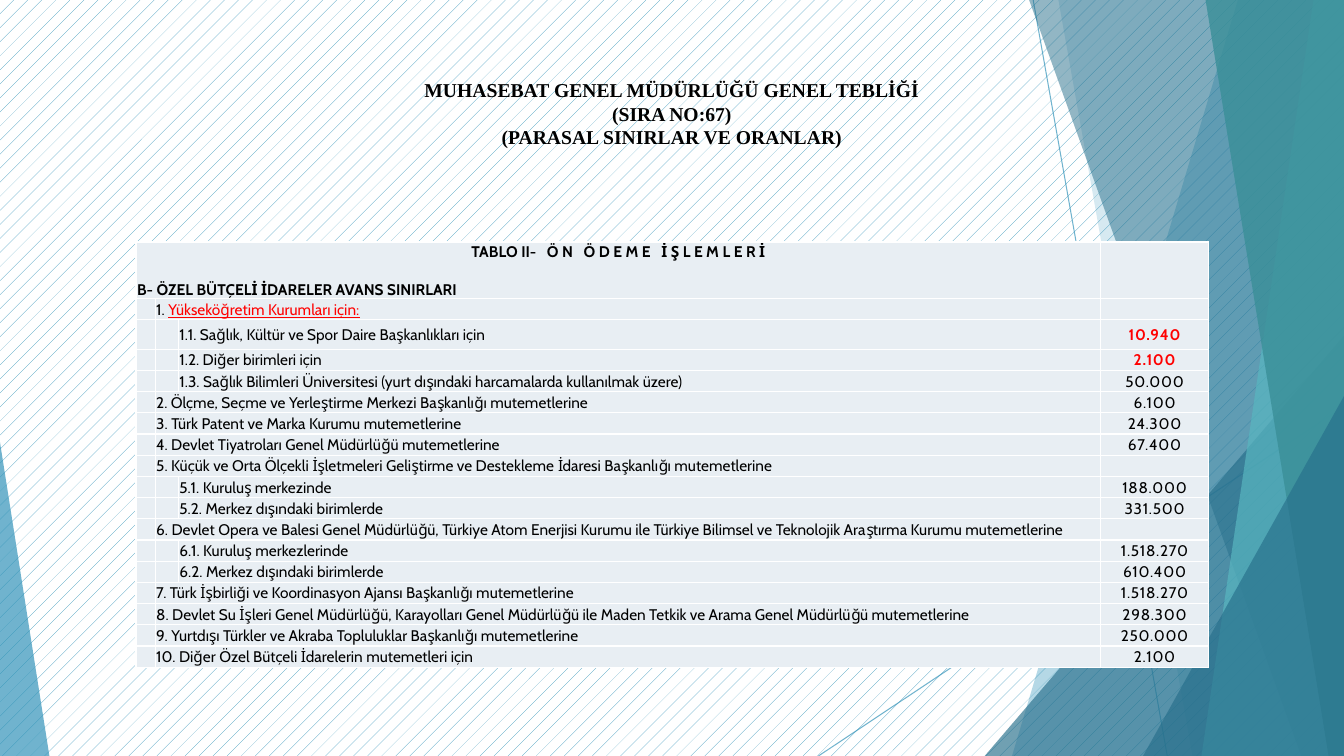
from lxml.etree import SubElement
from pptx import Presentation
from pptx.dml.color import RGBColor
from pptx.enum.dml import MSO_PATTERN
from pptx.enum.shapes import MSO_CONNECTOR, MSO_SHAPE
from pptx.enum.text import MSO_ANCHOR, MSO_AUTO_SIZE, PP_ALIGN
from pptx.oxml.ns import qn
from pptx.util import Pt

BLUE = RGBColor(0x34, 0x94, 0xBA)
DEEP = RGBColor(0x27, 0x6F, 0x8B)
AQUA = RGBColor(0x58, 0xB6, 0xC0)
TEAL = RGBColor(0x3A, 0x8F, 0x98)
PALE = RGBColor(0xE8, 0xEE, 0xF3)
WHITE = RGBColor(0xFF, 0xFF, 0xFF)
BLACK = RGBColor(0, 0, 0)
RED = RGBColor(0xFF, 0, 0)


def fade(shape, alpha):
    """Give the shape's first colour an opacity in percent."""
    color = shape._element.spPr.find(".//" + qn("a:srgbClr"))
    SubElement(color, qn("a:alpha")).set("val", str(alpha * 1000))


def write(para, text, gap=0, **look):
    """Add a run; gap is extra letter spacing in points."""
    run = para.add_run()
    run.text = text
    font = run.font
    form = {"name": "Cabin", "size": Pt(11), "bold": False} | look
    font.color.rgb = form.pop("color", BLACK)
    for name, value in form.items():
        setattr(font, name, value)
    if gap:
        run._r.get_or_add_rPr().set("spc", str(int(gap * 100)))


deck = Presentation()
deck.slide_width, deck.slide_height = Pt(960), Pt(540)
slide = deck.slides.add_slide(deck.slide_layouts[5])
shapes = slide.shapes
title = shapes.title

back = slide.background.fill
back.patterned()
back.pattern = MSO_PATTERN.PERCENT_5
back.fore_color.rgb, back.back_color.rgb = BLUE, WHITE

# Thin rays and translucent facets
for ends in [(738, 0, 833.8, 540), (960, 290.2, 584.6, 540)]:
    ray = shapes.add_connector(MSO_CONNECTOR.STRAIGHT, *map(Pt, ends))
    ray.line.color.rgb, ray.line.width = BLUE, Pt(0.75)
    fade(ray, 70)
    SubElement(ray._element.spPr, qn("a:effectLst"))

# Two numbers: top and bottom left corners of a facet reaching the right edge.
# Five numbers: place and size of a triangle, then where its tip lies.
facets = [
    ((884.2, 722.9), BLUE, 36),
    ((756, 851.8), BLUE, 20),
    ((703.4, 239.8, 256.6, 300.2, 1), DEEP, 66),
    ((735.1, 929.5), DEEP, 50),
    ((938.2, 858.2), AQUA, 70),
    ((861.1, 949), TEAL, 80),
    ((816.5, 283, 143.5, 257, 1), DEEP, 66),
    ((0, 316, 35.3, 224, 0), BLUE, 70),
]
for place, color, alpha in facets:
    if len(place) == 2:
        top, low = map(Pt, place)
        path = shapes.build_freeform(top, 0)
        path.add_line_segments([(Pt(960), 0), (Pt(960), Pt(540)), (low, Pt(540))])
        facet = path.convert_to_shape()
    else:
        facet = shapes.add_shape(MSO_SHAPE.ISOSCELES_TRIANGLE, *map(Pt, place[:4]))
        facet.adjustments[0] = place[4]
    facet.shadow.inherit = False
    facet.fill.solid()
    facet.fill.fore_color.rgb = color
    facet.line.fill.background()
    fade(facet, alpha)

# Title, brought in front of the facets
shapes._spTree.append(title._element)
title.left, title.top, title.width, title.height = map(Pt, (294.5, 51.8, 370.8, 58.3))
frame = title.text_frame
frame.word_wrap = False
frame.auto_size = MSO_AUTO_SIZE.SHAPE_TO_FIT_TEXT
frame.vertical_anchor = MSO_ANCHOR.MIDDLE
heads = ["MUHASEBAT GENEL MÜDÜRLÜĞÜ GENEL TEBLİĞİ", "(SIRA NO:67)",
         "(PARASAL SINIRLAR VE ORANLAR)"]
for i, text in enumerate(heads):
    para = frame.add_paragraph() if i else frame.paragraphs[0]
    para.alignment = PP_ALIGN.CENTER
    write(para, text, name="Times New Roman", size=Pt(14), bold=True)

# Table of limits: level, wording, value
limits = [
    (1, "1. ", ""),
    (2, "1.1. Sağlık, Kültür ve Spor Daire Başkanlıkları için", "10.940"),
    (2, "1.2. Diğer birimleri için", "2.100"),
    (2, "1.3. Sağlık Bilimleri Üniversitesi (yurt dışındaki harcamalarda kullanılmak üzere)", "50.000"),
    (1, "2. Ölçme, Seçme ve Yerleştirme Merkezi Başkanlığı mutemetlerine", "6.100"),
    (1, "3. Türk Patent ve Marka Kurumu mutemetlerine", "24.300"),
    (1, "4. Devlet Tiyatroları Genel Müdürlüğü mutemetlerine", "67.400"),
    (1, "5. Küçük ve Orta Ölçekli İşletmeleri Geliştirme ve Destekleme İdaresi Başkanlığı mutemetlerine", ""),
    (2, "5.1. Kuruluş merkezinde", "188.000"),
    (2, "5.2. Merkez dışındaki birimlerde", "331.500"),
    (1, "6. Devlet Opera ve Balesi Genel Müdürlüğü, Türkiye Atom Enerjisi Kurumu ile "
        "Türkiye Bilimsel ve Teknolojik Araştırma Kurumu mutemetlerine", ""),
    (2, "6.1. Kuruluş merkezlerinde", "1.518.270"),
    (2, "6.2. Merkez dışındaki birimlerde", "610.400"),
    (1, "7. Türk İşbirliği ve Koordinasyon Ajansı Başkanlığı mutemetlerine", "1.518.270"),
    (1, "8. Devlet Su İşleri Genel Müdürlüğü, Karayolları Genel Müdürlüğü ile "
        "Maden Tetkik ve Arama Genel Müdürlüğü mutemetlerine", "298.300"),
    (1, "9. Yurtdışı Türkler ve Akraba Topluluklar Başkanlığı mutemetlerine", "250.000"),
    (1, "10. Diğer Özel Bütçeli İdarelerin mutemetleri için", "2.100"),
]
count = len(limits) + 1
table = shapes.add_table(count, 4, Pt(97.2), Pt(172.8), Pt(766.1), Pt(304)).table
for col, width in zip(table.columns, (13.7, 16.6, 658.8, 77)):
    col.width = Pt(width)
for i, row in enumerate(table.rows):
    row.height = Pt({0: 40.4, 2: 21}.get(i, 15.16))

table.cell(0, 0).merge(table.cell(0, 2))
para = table.cell(0, 0).text_frame.paragraphs[0]
para.alignment = PP_ALIGN.CENTER
for i, word in enumerate(["TABLO II-", "Ö N", "Ö D E M E", "İ Ş L E M L E R İ"]):
    if i:
        write(para, " ", gap=5, bold=True)
    write(para, word, bold=True)
para = table.cell(0, 0).text_frame.add_paragraph()
para.space_before = Pt(13.4)
write(para, "B- ÖZEL BÜTÇELİ İDARELER AVANS SINIRLARI", bold=True)

for i, (level, text, value) in enumerate(limits, 1):
    if level == 1:
        table.cell(i, 1).merge(table.cell(i, 2))
    para = table.cell(i, level).text_frame.paragraphs[0]
    write(para, text)
    if i == 1:
        write(para, "Yükseköğretim Kurumları için:", color=RED, underline=True)
    if value:
        para = table.cell(i, 3).text_frame.paragraphs[0]
        para.alignment = PP_ALIGN.CENTER
        hot = i in (2, 3)
        write(para, value, gap=0.5, bold=hot, color=RED if hot else BLACK)

for cell in table.iter_cells():
    cell.margin_left = cell.margin_right = cell.margin_top = Pt(0.7)
    cell.margin_bottom = 0
    cell.vertical_anchor = MSO_ANCHOR.MIDDLE
    edges = cell._tc.get_or_add_tcPr()
    for side in ("lnL", "lnR", "lnT", "lnB"):
        edge = SubElement(edges, qn("a:" + side), w=str(Pt(1)))
        paint = SubElement(edge, qn("a:solidFill"))
        SubElement(paint, qn("a:srgbClr"), val=str(WHITE))
    cell.fill.solid()
    cell.fill.fore_color.rgb = PALE
    if not cell.text_frame.text:
        SubElement(cell.text_frame.paragraphs[0]._p, qn("a:endParaRPr"), sz="800")

deck.save("out.pptx")
